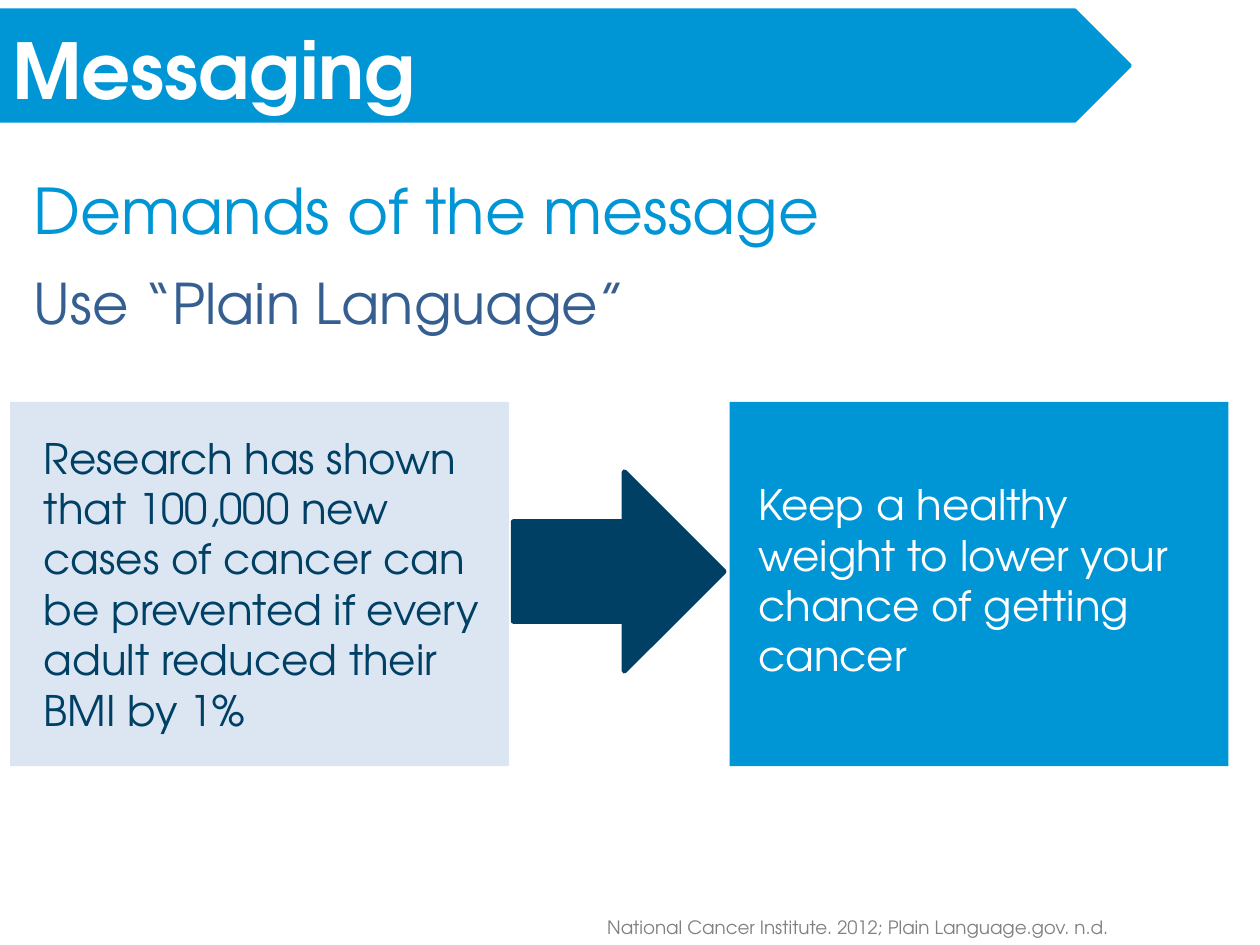
"""Build the Messaging slide about plain language."""
from pptx import Presentation
from pptx.dml.color import RGBColor
from pptx.enum.shapes import MSO_SHAPE
from pptx.enum.text import MSO_ANCHOR
from pptx.util import Inches, Pt

FONT = "TeX Gyre Adventor"
BLUE = RGBColor(0x00, 0x96, 0xD6)
PALE = RGBColor(0xDC, 0xE6, 0xF2)
NAVY = RGBColor(0x00, 0x40, 0x65)
SLATE = RGBColor(0x36, 0x5F, 0x91)
GRAY = RGBColor(0x80, 0x80, 0x80)
WHITE = RGBColor(0xFF, 0xFF, 0xFF)

SHAPES = [
    (MSO_SHAPE.RECTANGLE, (5.79, 3.19, 3.96, 2.89), BLUE, 0, 0),
    (MSO_SHAPE.RECTANGLE, (0.08, 3.19, 3.96, 2.89), PALE, 0, 0),
    (MSO_SHAPE.PENTAGON, (0, 0.08, 8.97, 0.88), BLUE, 2, 0),
    (MSO_SHAPE.DOWN_ARROW, (4.12, 3.7, 1.58, 1.67), NAVY, 3, 270),
]
TEXTS = [
    ("Messaging", (0, -0.08, 9, 1.25), 44, WHITE, True, MSO_ANCHOR.MIDDLE),
    ("Research has shown that 100,000 new cases of cancer can be prevented "
     "if every adult reduced their BMI by 1%",
     (0.25, 3.38, 3.67, 3.45), 24, NAVY, False, MSO_ANCHOR.TOP),
    ("Keep a healthy weight to lower your chance of getting cancer",
     (5.92, 3.75, 3.77, 1.75), 24, WHITE, False, MSO_ANCHOR.TOP),
    ("Demands of the message",
     (0.17, 1.31, 7.75, 0.71), 36, BLUE, False, MSO_ANCHOR.TOP),
    ("Use “Plain Language”",
     (0.17, 2.08, 7.92, 0.64), 32, SLATE, False, MSO_ANCHOR.TOP),
    ("National Cancer Institute. 2012; Plain Language.gov. n.d.",
     (4.72, 7.22, 5.59, 0.28), 10.5, GRAY, False, MSO_ANCHOR.TOP),
]


def add_filled_shape(slide, kind, box, color, line_width, rotation):
    shape = slide.shapes.add_shape(kind, *map(Inches, box))
    shape.shadow.inherit = False
    shape.rotation = rotation
    shape.fill.solid()
    shape.fill.fore_color.rgb = color
    if line_width:
        shape.line.color.rgb = color
        shape.line.width = Pt(line_width)
    else:
        shape.line.fill.background()


def add_text(slide, text, box, size, color, bold, anchor):
    text_frame = slide.shapes.add_textbox(*map(Inches, box)).text_frame
    text_frame.word_wrap = True
    text_frame.vertical_anchor = anchor
    text_frame.text = text
    font = text_frame.paragraphs[0].runs[0].font
    font.name = FONT
    font.size = Pt(size)
    font.bold = bold
    font.color.rgb = color


def main():
    presentation = Presentation()
    presentation.slide_width = Inches(10)
    presentation.slide_height = Inches(7.5)
    slide = presentation.slides.add_slide(presentation.slide_layouts[6])
    for shape in SHAPES:
        add_filled_shape(slide, *shape)
    for text in TEXTS:
        add_text(slide, *text)
    presentation.save("out.pptx")


if __name__ == "__main__":
    main()
